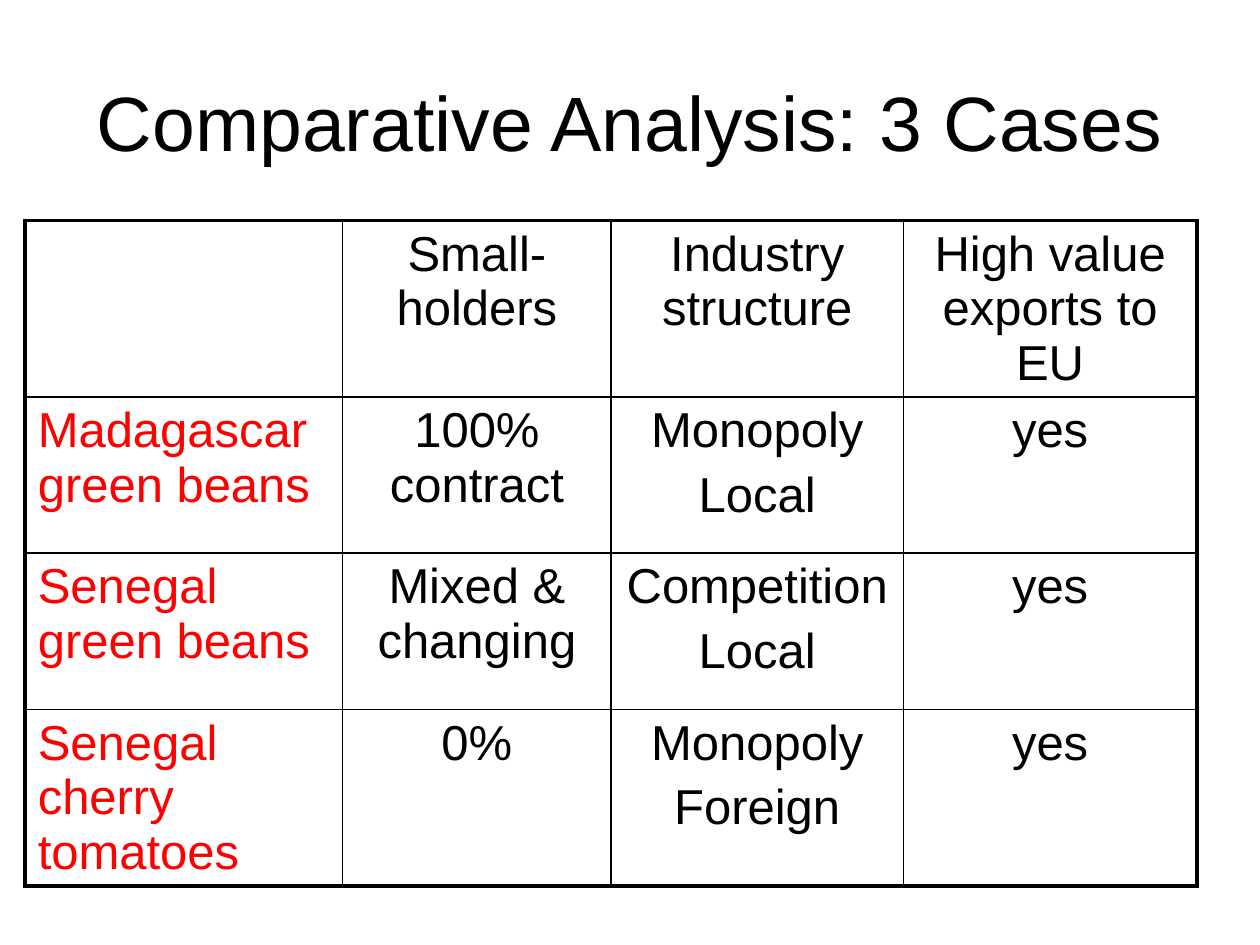
import pptx
import pptx.dml.color
import pptx.enum.text
import pptx.oxml
import pptx.oxml.ns
import pptx.util

Pt = pptx.util.Pt
ALIGN = pptx.enum.text.PP_ALIGN
ANCHOR = pptx.enum.text.MSO_ANCHOR

BLACK = pptx.dml.color.RGBColor(0x00, 0x00, 0x00)
RED = pptx.dml.color.RGBColor(0xFF, 0x00, 0x00)
FONT = "Arial"
INNER, OUTER = 1, 2.25

COLUMN_WIDTHS = [181.44, 153.36, 167.04, 167.76]
ROW_HEIGHT = 89.28
CASES = [
    ["", "Small-holders", "Industry structure", "High value exports to EU"],
    ["Madagascar green beans", "100% contract", "Monopoly\nLocal", "yes"],
    ["Senegal green beans", "Mixed & changing", "Competition\nLocal", "yes"],
    ["Senegal cherry tomatoes", "0%", "Monopoly\nForeign", "yes"],
]


def format_text(frame, size, color, align):
    for index, para in enumerate(frame.paragraphs):
        para.alignment = align
        if index:
            para.space_before = Pt(size * 0.2)
        for span in para.runs:
            span.font.name = FONT
            span.font.size = Pt(size)
            span.font.color.rgb = color


def set_borders(cell, widths):
    """Draw the cell's sides; widths maps L, R, T, B (in that order) to points."""
    properties = cell._tc.get_or_add_tcPr()
    for side, width in widths.items():
        properties.append(pptx.oxml.parse_xml(
            f'<a:ln{side} {pptx.oxml.ns.nsdecls("a")} w="{int(Pt(width))}">'
            f'<a:solidFill><a:srgbClr val="{BLACK}"/></a:solidFill></a:ln{side}>'))


def add_title(page, left, top, width, height):
    title = page.shapes.title
    title.left, title.top = Pt(left), Pt(top)
    title.width, title.height = Pt(width), Pt(height)
    frame = title.text_frame
    frame.text = "Comparative Analysis: 3 Cases"
    frame.word_wrap = True
    frame.auto_size = pptx.enum.text.MSO_AUTO_SIZE.NONE
    frame.vertical_anchor = ANCHOR.MIDDLE
    format_text(frame, 44, BLACK, ALIGN.CENTER)


def add_case_table(page, left, top):
    last_row, last_column = len(CASES) - 1, len(COLUMN_WIDTHS) - 1
    table = page.shapes.add_table(
        len(CASES), len(COLUMN_WIDTHS), Pt(left), Pt(top),
        Pt(sum(COLUMN_WIDTHS)), Pt(ROW_HEIGHT * len(CASES))).table
    table.first_row = table.horz_banding = False

    for column, width in zip(table.columns, COLUMN_WIDTHS):
        column.width = Pt(width)
    for row in table.rows:
        row.height = Pt(ROW_HEIGHT)

    for r, texts in enumerate(CASES):
        for c, text in enumerate(texts):
            cell = table.cell(r, c)
            # Heavy frame around the table, thin lines inside
            set_borders(cell, {
                "L": OUTER if c == 0 else INNER,
                "R": OUTER if c == last_column else INNER,
                "T": OUTER if r == 0 else INNER,
                "B": OUTER if r == last_row else INNER,
            })
            cell.fill.background()
            cell.vertical_anchor = ANCHOR.TOP
            # Case names in red at the left, findings centred
            cell.text_frame.text = text
            color, align = (RED, ALIGN.LEFT) if c == 0 else (BLACK, ALIGN.CENTER)
            format_text(cell.text_frame, 28, color, align)


def main():
    deck = pptx.Presentation()
    deck.slide_width, deck.slide_height = Pt(720), Pt(540)
    page = deck.slides.add_slide(deck.slide_layouts[5])
    add_title(page, 36, 21.6, 648, 95.04)
    add_case_table(page, 14.4, 126)
    deck.save("out.pptx")


if __name__ == "__main__":
    main()
